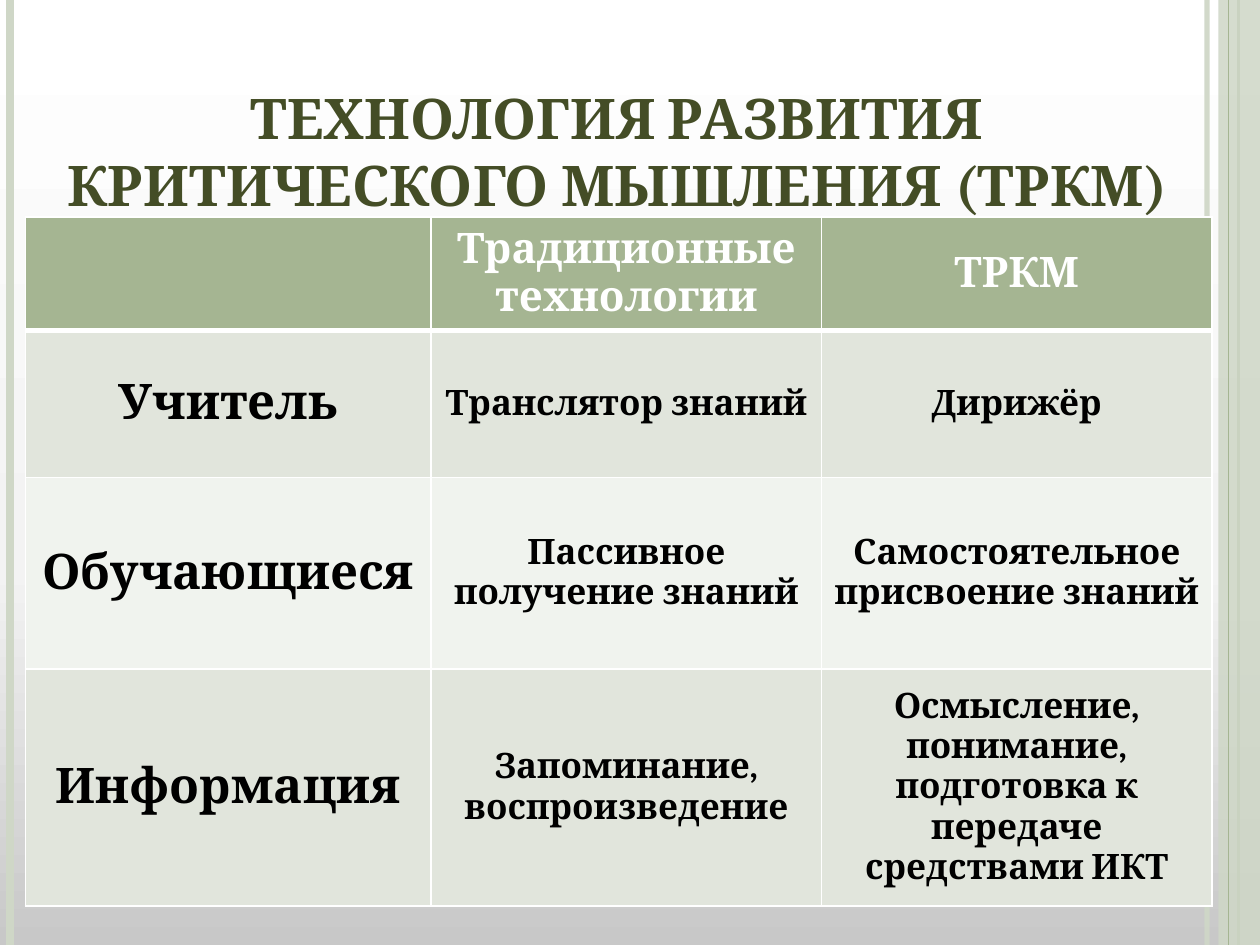
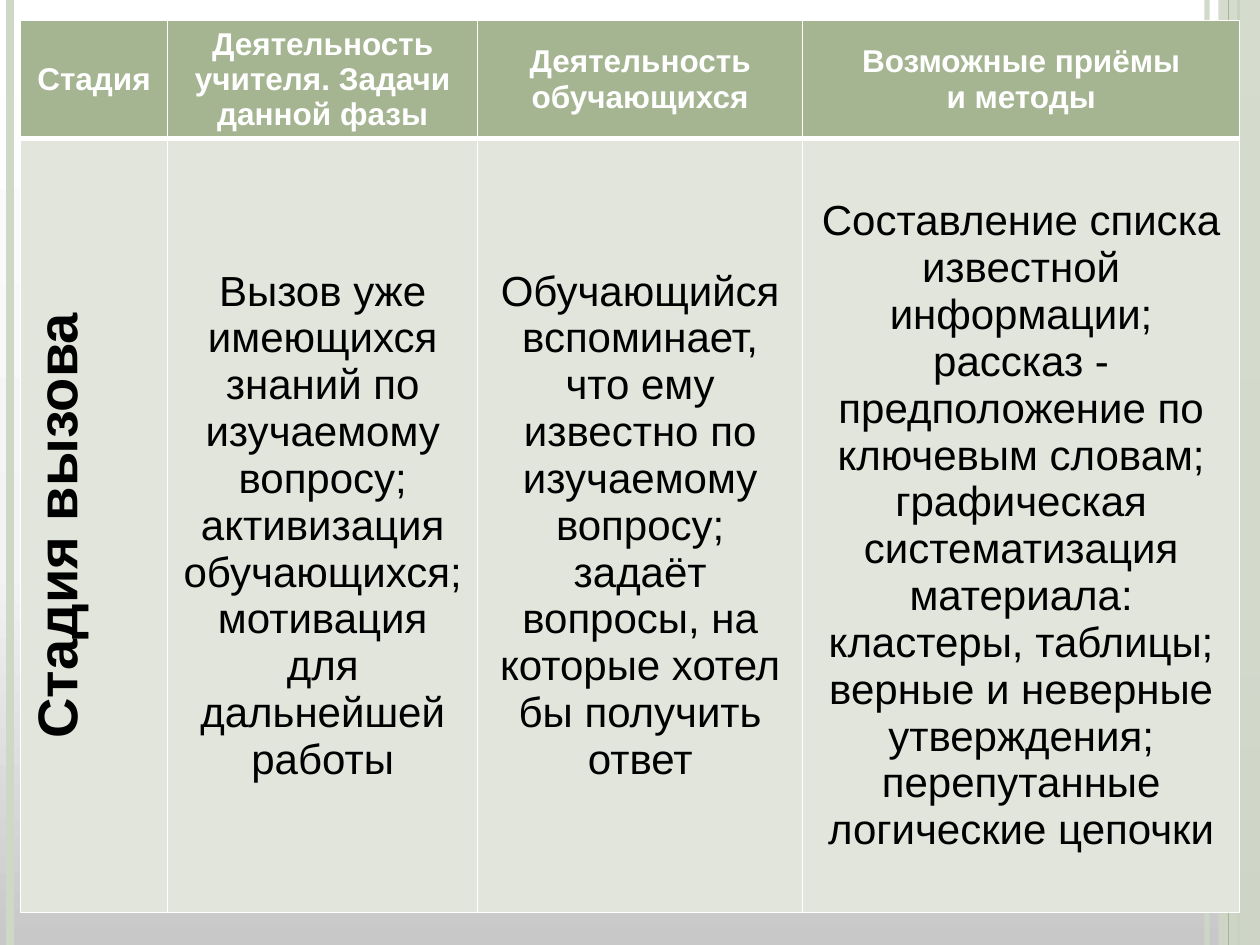
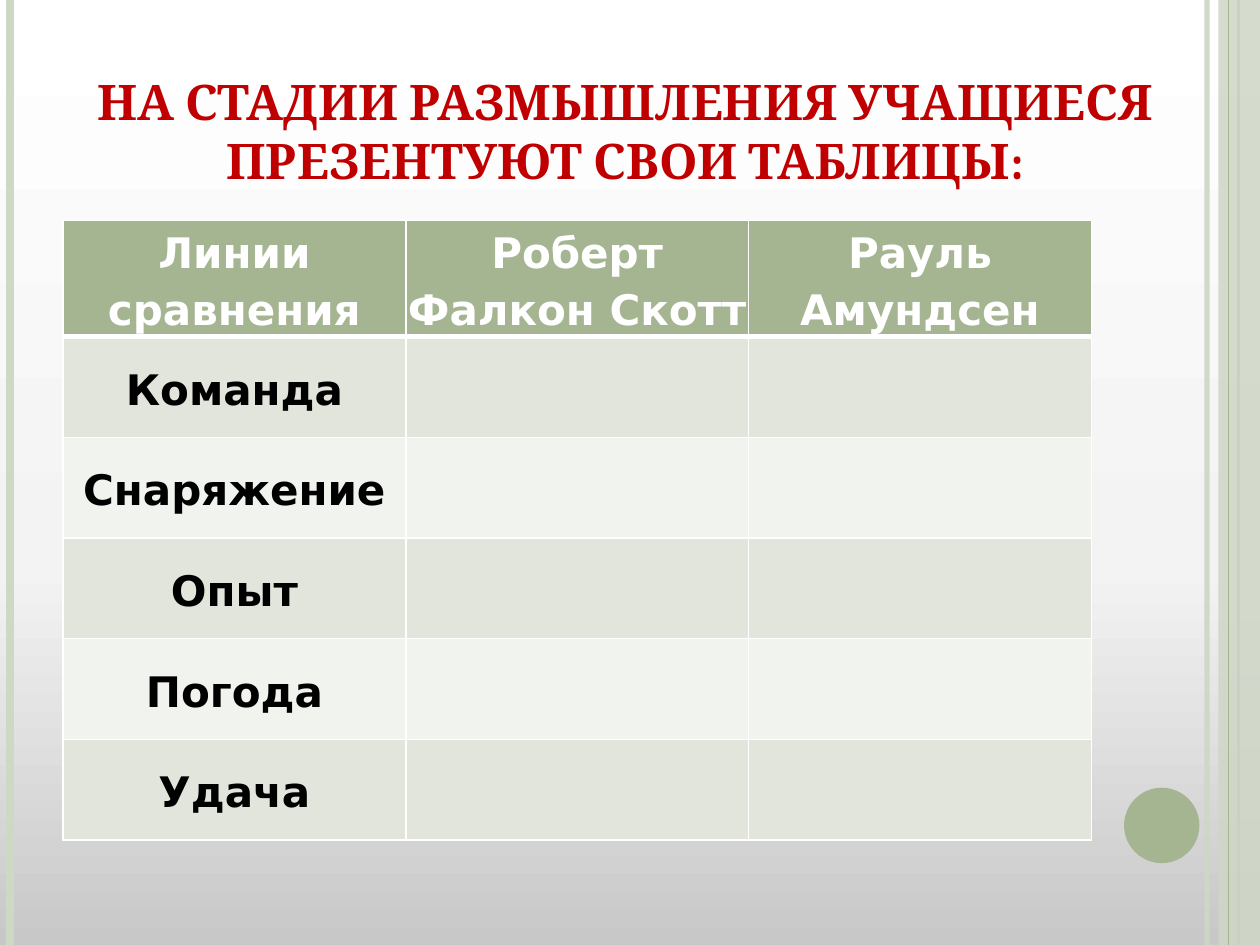
from lxml import etree
from pptx import Presentation
from pptx.dml.color import RGBColor
from pptx.enum.shapes import MSO_CONNECTOR, MSO_SHAPE
from pptx.enum.text import MSO_ANCHOR, PP_ALIGN
from pptx.oxml.ns import qn
from pptx.util import Cm, Pt

STRAIGHT = MSO_CONNECTOR.STRAIGHT
RECTANGLE, OVAL = MSO_SHAPE.RECTANGLE, MSO_SHAPE.OVAL
MIDDLE, BOTTOM = MSO_ANCHOR.MIDDLE, MSO_ANCHOR.BOTTOM
CENTER = PP_ALIGN.CENTER

WHITE = RGBColor(0xFF, 0xFF, 0xFF)
BLACK = RGBColor(0x00, 0x00, 0x00)
GREEN = RGBColor(0xA5, 0xB5, 0x92)
PALE_GREEN = RGBColor(0xCF, 0xD7, 0xC7)
DARK_GREEN = RGBColor(0x44, 0x4D, 0x26)
RED = RGBColor(0xC0, 0x00, 0x00)
ROW_DARK = RGBColor(0xE1, 0xE5, 0xDC)
ROW_LIGHT = RGBColor(0xF0, 0xF3, 0xEE)
BACKGROUND_STOPS = [(0, "C8C8C8"), (40, "F3F3F3"), (100, "FFFFFF")]

WIDTH, HEIGHT = 25.4, 19.05

# Content: a cell is a text or a list of paragraphs; lengths in cm, sizes in points
SLIDES = [
    {
        "title": {
            "text": "ТЕХНОЛОГИЯ РАЗВИТИЯ КРИТИЧЕСКОГО МЫШЛЕНИЯ (ТРКМ)",
            "box": (0, 0.56, 24.89, 3.96), "size": 32, "color": DARK_GREEN,
        },
        "table": {
            "position": (0.51, 4.37),
            "columns": [8.18, 7.87, 7.87],
            "rows": [2.08, 2.97, 3.86, 4.78],
            "font": "Cambria",
            "header_size": 24, "label_size": 28, "body_size": 20, "body_bold": True,
            "cells": [
                ["", "Традиционные технологии", "ТРКМ"],
                ["Учитель", "Транслятор знаний", "Дирижёр"],
                ["Обучающиеся", "Пассивное получение знаний",
                 "Самостоятельное присвоение знаний"],
                ["Информация", "Запоминание, воспроизведение",
                 "Осмысление, понимание, подготовка к передаче средствами ИКТ"],
            ],
        },
    },
    {
        "table": {
            "position": (0.41, 0.41),
            "columns": [2.97, 6.25, 6.55, 8.81],
            "rows": [1.68, 15.6],
            "font": "Arial",
            "header_size": 18, "label_size": 32, "body_size": 24, "body_bold": False,
            "vertical_labels": True,
            "cells": [
                ["Стадия", "Деятельность учителя. Задачи данной фазы",
                 "Деятельность обучающихся", ["Возможные приёмы", "и методы"]],
                ["Стадия вызова",
                 "Вызов уже имеющихся знаний по изучаемому вопросу; активизация "
                 "обучающихся; мотивация для дальнейшей работы",
                 "Обучающийся вспоминает, что ему известно по изучаемому вопросу; "
                 "задаёт вопросы, на которые хотел бы получить ответ",
                 ["Составление списка известной информации; рассказ - предположение "
                  "по ключевым словам; графическая систематизация материала:",
                  "кластеры, таблицы;",
                  "верные и неверные утверждения;",
                  "перепутанные логические цепочки"]],
            ],
        },
    },
    {
        "title": {
            "text": "НА СТАДИИ РАЗМЫШЛЕНИЯ УЧАЩИЕСЯ ПРЕЗЕНТУЮТ СВОИ ТАБЛИЦЫ:",
            "box": (0.79, 0.76, 23.62, 3.18), "size": 28, "color": RED,
        },
        "circle": True,
        "table": {
            "position": (1.27, 4.45),
            "columns": [6.91] * 3,
            "rows": [2.03] * 6,
            "font": "DejaVu Sans",
            "header_size": 24, "label_size": 24, "body_size": 24, "body_bold": True,
            "spaced": True,
            "cells": [
                ["Линии сравнения", "Роберт Фалкон Скотт", "Рауль Амундсен"],
                *[[label, "", ""] for label in
                  ("Команда", "Снаряжение", "Опыт", "Погода", "Удача")],
            ],
        },
    },
]


def set_background(master):
    fill = master.background.fill
    fill.gradient()
    fill.gradient_angle = 90
    stops = master.element.find(".//" + qn("a:gsLst"))
    stops.clear()
    for percent, color in BACKGROUND_STOPS:
        stop = etree.SubElement(stops, qn("a:gs"), pos=str(percent * 1000))
        etree.SubElement(stop, qn("a:srgbClr"), val=color)


def set_opacity(color_parent, percent):
    color = color_parent.find(".//" + qn("a:srgbClr"))
    etree.SubElement(color, qn("a:alpha"), val=str(percent * 1000))


def add_vertical_line(slide, x, color, width):
    line = slide.shapes.add_connector(STRAIGHT, Cm(x), 0, Cm(x), Cm(HEIGHT))
    line.line.color.rgb = color
    line.line.width = Pt(width)
    etree.SubElement(line._element.spPr, qn("a:effectLst"))
    return line


def add_plain_shape(slide, kind, box, color):
    shape = slide.shapes.add_shape(kind, *map(Cm, box))
    shape.shadow.inherit = False
    shape.fill.solid()
    shape.fill.fore_color.rgb = color
    shape.line.fill.background()
    return shape


def add_side_bands(slide):
    inner_line = add_vertical_line(slide, 24.33, PALE_GREEN, 3)
    set_opacity(inner_line._element.spPr, 93)
    add_vertical_line(slide, 0.2, PALE_GREEN, 4.5)
    add_vertical_line(slide, 24.97, GREEN, 1.5)
    band = add_plain_shape(slide, RECTANGLE, (24.56, 0, 0.84, HEIGHT), PALE_GREEN)
    set_opacity(band._element.spPr, 87)
    add_vertical_line(slide, 24.77, GREEN, 0.75)


def write_text(frame, paragraphs, font, size, color, bold, spaced=False):
    for index, text in enumerate(paragraphs):
        paragraph = frame.paragraphs[0] if index == 0 else frame.add_paragraph()
        paragraph.alignment = CENTER
        if spaced:
            paragraph.line_spacing = 1.15
            paragraph.space_after = Pt(10)
        run = paragraph.add_run()
        run.text = text
        run.font.name = font
        run.font.size = Pt(size)
        run.font.bold = bold
        run.font.color.rgb = color


def add_title(slide, title):
    frame = slide.shapes.add_textbox(*map(Cm, title["box"])).text_frame
    frame.word_wrap = True
    frame.vertical_anchor = BOTTOM
    write_text(frame, [title["text"]], "Cambria", title["size"], title["color"], True)


def set_borders(cell, row):
    widths = {"L": 1, "R": 1, "T": 3 if row == 1 else 1, "B": 3 if row == 0 else 1}
    properties = cell._tc.get_or_add_tcPr()
    for side, width in widths.items():
        border = etree.SubElement(properties, qn("a:ln" + side), w=str(Pt(width)))
        fill = etree.SubElement(border, qn("a:solidFill"))
        etree.SubElement(fill, qn("a:srgbClr"), val=str(WHITE))


def fill_cell(cell, content, row, column, data):
    set_borders(cell, row)
    cell.fill.solid()
    cell.fill.fore_color.rgb = GREEN if row == 0 else ROW_DARK if row % 2 else ROW_LIGHT
    cell.vertical_anchor = MIDDLE
    if not content:
        return

    spaced = data.get("spaced", False)
    if spaced:
        cell.margin_left = cell.margin_right = cell.margin_top = cell.margin_bottom = 0
    if row and column == 0 and data.get("vertical_labels"):
        cell._tc.get_or_add_tcPr().set("vert", "vert270")

    role = "header" if row == 0 else "label" if column == 0 else "body"
    paragraphs = [content] if isinstance(content, str) else content
    write_text(cell.text_frame, paragraphs, data["font"], data[role + "_size"],
               WHITE if role == "header" else BLACK,
               role != "body" or data["body_bold"], spaced)


def add_data_table(slide, data):
    columns, rows = data["columns"], data["rows"]
    left, top = data["position"]
    table = slide.shapes.add_table(len(rows), len(columns), Cm(left), Cm(top),
                                   Cm(sum(columns)), Cm(sum(rows))).table
    for column, width in zip(table.columns, columns):
        column.width = Cm(width)
    for row, height in zip(table.rows, rows):
        row.height = Cm(height)
    for row, contents in enumerate(data["cells"]):
        for column, content in enumerate(contents):
            fill_cell(table.cell(row, column), content, row, column, data)


def main():
    presentation = Presentation()
    presentation.slide_width, presentation.slide_height = Cm(WIDTH), Cm(HEIGHT)
    set_background(presentation.slide_master)
    for content in SLIDES:
        slide = presentation.slides.add_slide(presentation.slide_layouts[6])
        add_side_bands(slide)
        if content.get("circle"):
            add_plain_shape(slide, OVAL, (22.66, 15.88, 1.52, 1.52), GREEN)
        if "title" in content:
            add_title(slide, content["title"])
        add_data_table(slide, content["table"])
    presentation.save("out.pptx")


if __name__ == "__main__":
    main()
